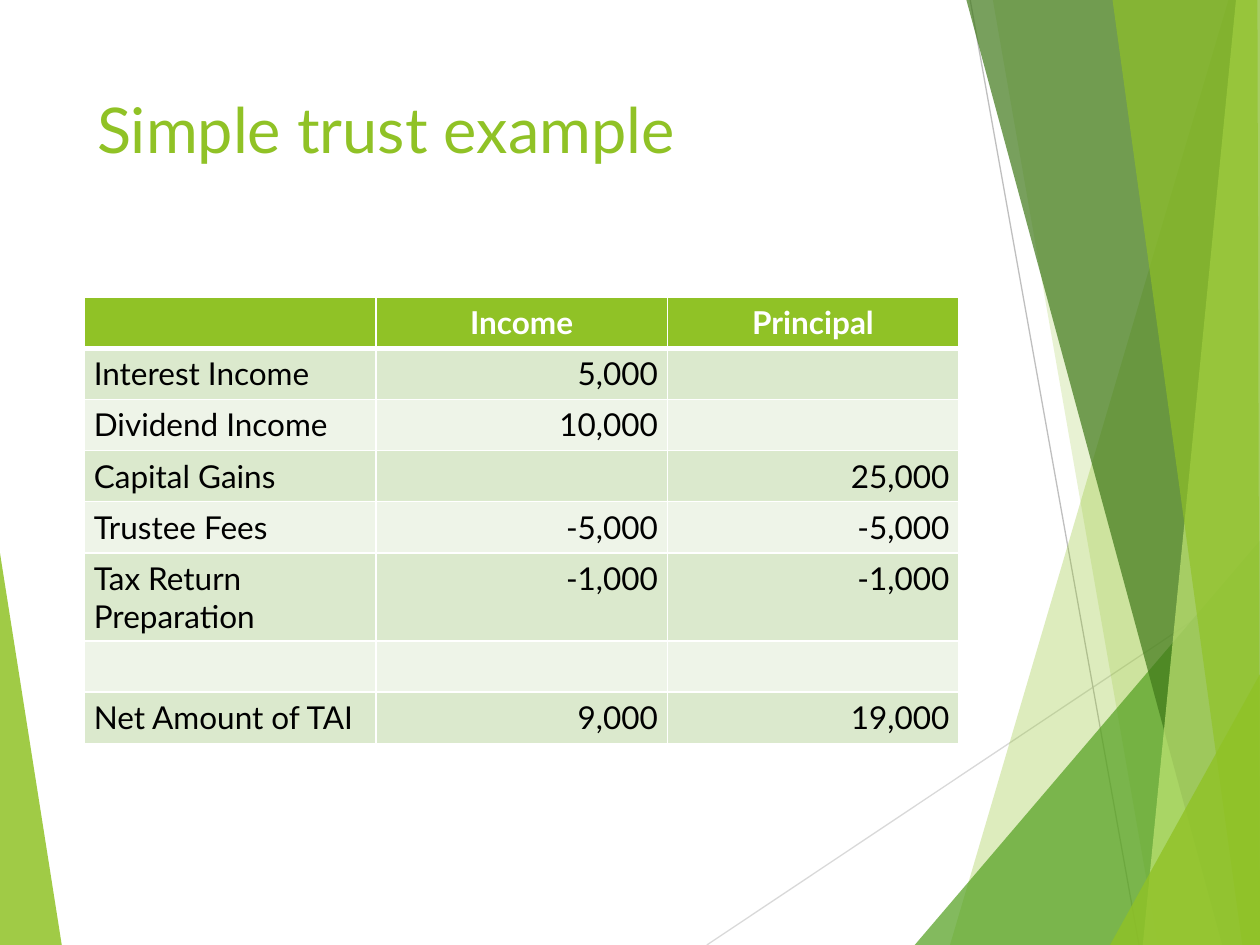
import pptx
import pptx.util
import pptx.dml.color
import pptx.enum.shapes
import pptx.enum.text
import lxml.etree
from pptx.oxml.ns import qn

Inches, Pt = pptx.util.Inches, pptx.util.Pt
Align = pptx.enum.text.PP_ALIGN

# Content
TITLE = "Simple trust example"
HEADER = ("", "Income", "Principal")
ROWS = [
    ("Interest Income", "5,000", ""),
    ("Dividend Income", "10,000", ""),
    ("Capital Gains", "", "25,000"),
    ("Trustee Fees", "-5,000", "-5,000"),
    ("Tax Return Preparation", "-1,000", "-1,000"),
    ("", "", ""),
    ("Net Amount of TAI", "9,000", "19,000"),
]

# Theme
THEME = {
    "font": "Lato", "title size": 36, "table size": 18,
    "lime": "90C226", "green": "54A021", "forest": "3F7819", "pale": "C0E474",
    "light line": "D9D9D9", "line": "BFBFBF",
    "white": "FFFFFF", "text": "000000", "bands": ("DBE9CD", "EEF4E8"),
}

# Layout in inches, with the table's row height and cell margins in points
WIDTH, HEIGHT = 10, 7.5
LEFT, CONTENT_WIDTH = 0.67, 6.94
TITLE_TOP, TITLE_HEIGHT = 0.67, 1.44
TABLE_TOP = 2.36
ROW_HEIGHT = Pt(29.2)
MARGIN_X, MARGIN_Y = Pt(5.4), Pt(3.6)

# Backdrop: straight lines, then translucent facets (corners, colour, opacity %)
LINES = [
    ((5.61, HEIGHT), (WIDTH, 4.57), "light line"),
    ((7.7, 0), (9.04, HEIGHT), "line"),
]
TOP_RIGHT, BOTTOM_RIGHT = (WIDTH, 0), (WIDTH, HEIGHT)
FACETS = [
    ([(0, 4.39), (0.49, HEIGHT), (0, HEIGHT)], "lime", 85),
    ([(9.75, 0), (7.54, HEIGHT), BOTTOM_RIGHT, TOP_RIGHT], "lime", 30),
    ([(7.88, 0), (9.19, HEIGHT), BOTTOM_RIGHT, TOP_RIGHT], "lime", 20),
    ([(7.26, HEIGHT), (WIDTH, 4.29), BOTTOM_RIGHT], "green", 72),
    ([(7.67, 0), (9.7, HEIGHT), BOTTOM_RIGHT, TOP_RIGHT], "forest", 70),
    ([(9.81, 0), (9.07, HEIGHT), BOTTOM_RIGHT, TOP_RIGHT], "pale", 70),
    ([(8.83, 0), (9.86, HEIGHT), BOTTOM_RIGHT, (9.98, 0)], "lime", 65),
    ([(8.81, HEIGHT), (WIDTH, 5.35), BOTTOM_RIGHT], "lime", 80),
]


def color(value):
    return pptx.dml.color.RGBColor.from_string(value)


def add_run(paragraph, text, size, value, bold=False):
    run = paragraph.add_run()
    run.text = text
    run.font.name = THEME["font"]
    run.font.size = Pt(size)
    run.font.bold = bold
    run.font.color.rgb = color(value)


def add_line(slide, start, end, name):
    connector = slide.shapes.add_connector(
        pptx.enum.shapes.MSO_CONNECTOR.STRAIGHT,
        *(Inches(length) for length in start + end))
    connector.line.color.rgb = color(THEME[name])
    connector.line.width = Pt(0.75)
    lxml.etree.SubElement(connector.element.spPr, qn("a:effectLst"))


def add_facet(slide, corners, name, opacity):
    points = [(Inches(x), Inches(y)) for x, y in corners]
    builder = slide.shapes.build_freeform(*points[0])
    builder.add_line_segments(points[1:], close=True)
    shape = builder.convert_to_shape()
    shape.shadow.inherit = False
    shape.line.fill.background()
    shape.fill.solid()
    shape.fill.fore_color.rgb = color(THEME[name])
    fill_color = shape.element.spPr.find(".//" + qn("a:srgbClr"))
    lxml.etree.SubElement(fill_color, qn("a:alpha"), val=str(opacity * 1000))


def set_borders(cell, widths):
    properties = cell._tc.get_or_add_tcPr()
    for side, width in widths.items():
        border = lxml.etree.SubElement(properties, qn("a:ln" + side), w=str(Pt(width)))
        fill = lxml.etree.SubElement(border, qn("a:solidFill"))
        lxml.etree.SubElement(fill, qn("a:srgbClr"), val=THEME["white"])


def format_cell(cell, text, row, column):
    is_header = row == 0
    cell.margin_left = cell.margin_right = MARGIN_X
    cell.margin_top = cell.margin_bottom = MARGIN_Y
    set_borders(cell, {"L": 1, "R": 1, "T": 3 if row == 1 else 1,
                       "B": 3 if is_header else 1})
    cell.fill.solid()
    cell.fill.fore_color.rgb = color(
        THEME["lime"] if is_header else THEME["bands"][(row - 1) % 2])
    paragraph = cell.text_frame.paragraphs[0]
    if is_header:
        paragraph.alignment = Align.CENTER
    else:
        paragraph.alignment = Align.RIGHT if column else Align.LEFT
    if text:
        add_run(paragraph, text, THEME["table size"],
                THEME["white" if is_header else "text"], is_header)


def add_title(slide):
    title = slide.shapes.title
    title.left, title.top = Inches(LEFT), Inches(TITLE_TOP)
    title.width, title.height = Inches(CONTENT_WIDTH), Inches(TITLE_HEIGHT)
    title.text_frame.vertical_anchor = pptx.enum.text.MSO_ANCHOR.TOP
    paragraph = title.text_frame.paragraphs[0]
    paragraph.alignment = Align.LEFT
    add_run(paragraph, TITLE, THEME["title size"], THEME["lime"])


def add_trust_table(slide):
    records = [HEADER] + ROWS
    table = slide.shapes.add_table(
        len(records), len(HEADER), Inches(LEFT), Inches(TABLE_TOP),
        Inches(CONTENT_WIDTH), ROW_HEIGHT * len(records)).table
    table.horz_banding = False
    for row, record in enumerate(records):
        for column, text in enumerate(record):
            format_cell(table.cell(row, column), text, row, column)


def main():
    presentation = pptx.Presentation()
    presentation.slide_width = Inches(WIDTH)
    presentation.slide_height = Inches(HEIGHT)
    slide = presentation.slides.add_slide(
        presentation.slide_layouts.get_by_name("Title Only"))

    # Backdrop, with the left facet behind the lines
    add_facet(slide, *FACETS[0])
    for line in LINES:
        add_line(slide, *line)
    for facet in FACETS[1:]:
        add_facet(slide, *facet)

    # Title and table
    add_title(slide)
    add_trust_table(slide)
    presentation.save("out.pptx")


if __name__ == "__main__":
    main()
